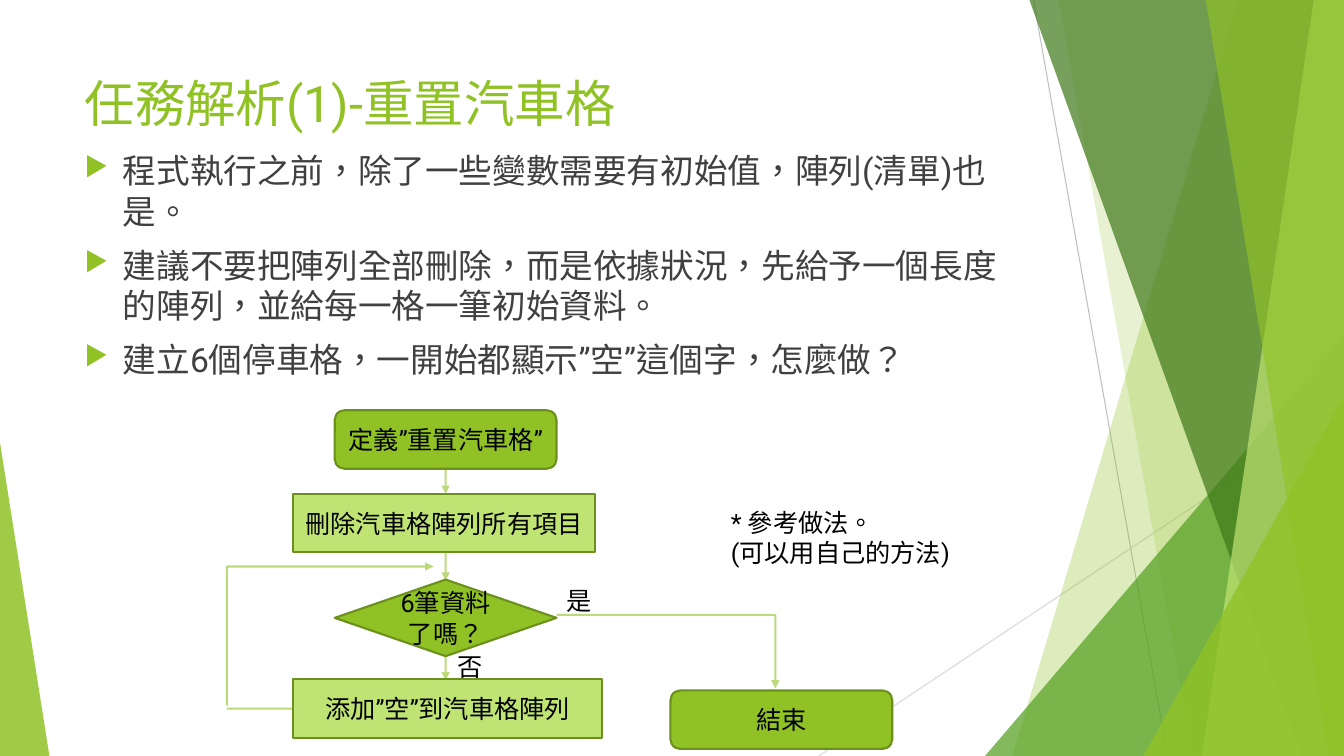
from lxml.etree import SubElement
from pptx import Presentation
from pptx.dml.color import RGBColor
from pptx.enum.lang import MSO_LANGUAGE_ID
from pptx.enum.shapes import MSO_CONNECTOR, MSO_SHAPE
from pptx.enum.text import MSO_ANCHOR, MSO_AUTO_SIZE, PP_ALIGN
from pptx.oxml.ns import qn
from pptx.util import Inches, Pt

W, H = 13.33, 7.5
FONT = "Roboto"
COLORS = {
    "green": "90C226", "lime": "C0E474", "leaf": "54A021", "forest": "3F7819",
    "edge": "6B901C", "text": "404040", "black": "000000",
    "gray": "BFBFBF", "pale": "D9D9D9",
}

TITLE = "任務解析(1)-重置汽車格"
BULLETS = [
    "程式執行之前，除了一些變數需要有初始值，陣列(清單)也是。",
    "建議不要把陣列全部刪除，而是依據狀況，先給予一個長度的陣列，並給每一格一筆初始資料。",
    "建立6個停車格，一開始都顯示”空”這個字，怎麼做？",
]

# Backdrop: thin lines, then facets from back to front
RAYS = [((10.25, 0), (11.58, H), "gray"), ((W, 4.03), (8.12, H), "pale")]
# Bands run to the right edge: top-left x, bottom-left x, colour, opacity %
# Triangles: left, top, width, apex position, colour, opacity %
FACETS = [
    ("band", 12.28, 10.04, "green", 30),
    ("band", 10.5, 11.83, "green", 20),
    ("triangle", 9.77, 3.33, 3.56, 1, "leaf", 72),
    ("band", 10.21, 12.91, "forest", 70),
    ("band", 13.03, 11.92, "lime", 70),
    ("band", 11.96, 13.18, "green", 65),
    ("triangle", 11.34, 3.93, 1.99, 1, "green", 80),
    ("triangle", 0, 4.39, 0.49, 0, "green", 85),
]

# Flowchart: text, shape, left, top, width, height, fill
STEP_H = 0.58
STEPS = [
    ("定義”重置汽車格”", MSO_SHAPE.ROUNDED_RECTANGLE, 3.32, 4.07, 2.2, STEP_H, "green"),
    ("刪除汽車格陣列所有項目", MSO_SHAPE.RECTANGLE, 2.91, 4.9, 2.99, STEP_H, "lime"),
    ("添加”空”到汽車格陣列", MSO_SHAPE.RECTANGLE, 2.91, 6.74, 3.06, STEP_H, "lime"),
    ("6筆資料了嗎？", MSO_SHAPE.FLOWCHART_DECISION, 3.32, 5.75, 2.2, 0.76, "green"),
    ("結束", MSO_SHAPE.ROUNDED_RECTANGLE, 6.65, 6.85, 2.2, STEP_H, "green"),
]
AXIS, END_X, LOOP_X = 4.42, 7.69, 2.25
# From, to, arrowhead
FLOWS = [
    ((AXIS, 4.65), (AXIS, 4.9), True),
    ((AXIS, 5.47), (AXIS, 5.76), True),
    ((AXIS, 6.51), (AXIS, 6.75), True),
    ((5.52, 6.1), (END_X, 6.1), False),
    ((END_X, 6.1), (END_X, 6.83), True),
    ((2.91, 7.03), (LOOP_X, 7.03), False),
    ((LOOP_X, 7), (LOOP_X, 5.62), False),
    ((LOOP_X, 5.62), (4.3, 5.62), True),
]
# Lines, left, top, width, height, wrap
LABELS = [
    (["是"], 5.52, 5.76, 0.45, 0.4, False),
    (["否"], 4.44, 6.41, 0.45, 0.4, False),
    (["* 參考做法。", "(可以用自己的方法)"], 7.15, 4.98, 2.41, 0.71, True),
]


def rgb(name):
    return RGBColor.from_string(COLORS[name])


def box(*lengths):
    return [Inches(v) for v in lengths]


def add_run(p, text, size, color):
    r = p.add_run()
    r.text = text
    r.font.size = Pt(size)
    r.font.name = FONT
    r.font.color.rgb = rgb(color)
    r.font.language_id = MSO_LANGUAGE_ID.TRADITIONAL_CHINESE
    SubElement(r.font._element, qn("a:ea"), typeface=FONT)


def set_alpha(parent, percent):
    for clr in parent.iter(qn("a:srgbClr")):
        SubElement(clr, qn("a:alpha"), val=str(percent * 1000))


def add_line(shapes, start, end, color, width, alpha=100, arrow=False):
    c = shapes.add_connector(MSO_CONNECTOR.STRAIGHT, *box(*start, *end))
    c.line.color.rgb = rgb(color)
    c.line.width = Pt(width)
    ln = c.line._get_or_add_ln()
    if alpha < 100:
        set_alpha(ln, alpha)
    if arrow:
        SubElement(ln, qn("a:tailEnd"), type="triangle")
    SubElement(c._element.spPr, qn("a:effectLst"))


def paint(sp, fill, alpha=100):
    sp.shadow.inherit = False
    sp.fill.solid()
    sp.fill.fore_color.rgb = rgb(fill)
    if alpha < 100:
        set_alpha(sp._element.spPr, alpha)


def add_bullet(p):
    pPr = p._p.get_or_add_pPr()
    pPr.set("marL", str(Inches(0.38)))
    pPr.set("indent", str(-Inches(0.38)))
    clr = SubElement(pPr, qn("a:buClr"))
    SubElement(clr, qn("a:srgbClr"), val=COLORS["green"])
    SubElement(pPr, qn("a:buSzPct"), val="80000")
    SubElement(pPr, qn("a:buChar"), char="▶")


prs = Presentation()
prs.slide_width, prs.slide_height = box(W, H)
s = prs.slides.add_slide(prs.slide_layouts[5])

# Backdrop
backdrop = s.shapes.add_group_shape().shapes
for start, end, color in RAYS:
    add_line(backdrop, start, end, color, 0.75)
for kind, *geometry, color, alpha in FACETS:
    if kind == "band":
        top_x, bottom_x = geometry
        outline = backdrop.build_freeform(*box(top_x, 0))
        outline.add_line_segments([box(W, 0), box(W, H), box(bottom_x, H)])
        sp = outline.convert_to_shape()
    else:
        left, top, width, apex = geometry
        sp = backdrop.add_shape(MSO_SHAPE.ISOSCELES_TRIANGLE,
                                *box(left, top, width, H - top))
        sp.adjustments[0] = apex
    paint(sp, color, alpha)
    sp.line.fill.background()

# Title
title = s.shapes.title
title.left, title.top, title.width, title.height = box(0.74, 0.67, 9.4, 1.44)
tf = title.text_frame
tf.auto_size = MSO_AUTO_SIZE.NONE
tf.vertical_anchor = MSO_ANCHOR.TOP
tf.paragraphs[0].alignment = PP_ALIGN.LEFT
add_run(tf.paragraphs[0], TITLE, 36, "green")

# Bullets
tf = s.shapes.add_textbox(*box(0.74, 1.44, 9.4, 4.24)).text_frame
tf.word_wrap = True
for i, text in enumerate(BULLETS):
    p = tf.add_paragraph() if i else tf.paragraphs[0]
    p.space_before = Pt(10)
    add_bullet(p)
    add_run(p, text, 24, "text")

# Flowchart
chart = s.shapes.add_group_shape().shapes
for start, end, arrow in FLOWS:
    add_line(chart, start, end, "green", 1.5, 60, arrow)
for text, preset, left, top, width, height, fill in STEPS:
    sp = chart.add_shape(preset, *box(left, top, width, height))
    paint(sp, fill)
    sp.line.color.rgb = rgb("edge")
    sp.line.width = Pt(1.5)
    tf = sp.text_frame
    tf.word_wrap = True
    tf.vertical_anchor = MSO_ANCHOR.MIDDLE
    p = tf.paragraphs[0]
    p.alignment = PP_ALIGN.CENTER
    add_run(p, text, 18, "black")

# Branch labels and side note
for lines, left, top, width, height, wrap in LABELS:
    tf = chart.add_textbox(*box(left, top, width, height)).text_frame
    tf.word_wrap = wrap
    for i, text in enumerate(lines):
        p = tf.add_paragraph() if i else tf.paragraphs[0]
        add_run(p, text, 18, "black")

prs.save("out.pptx")
